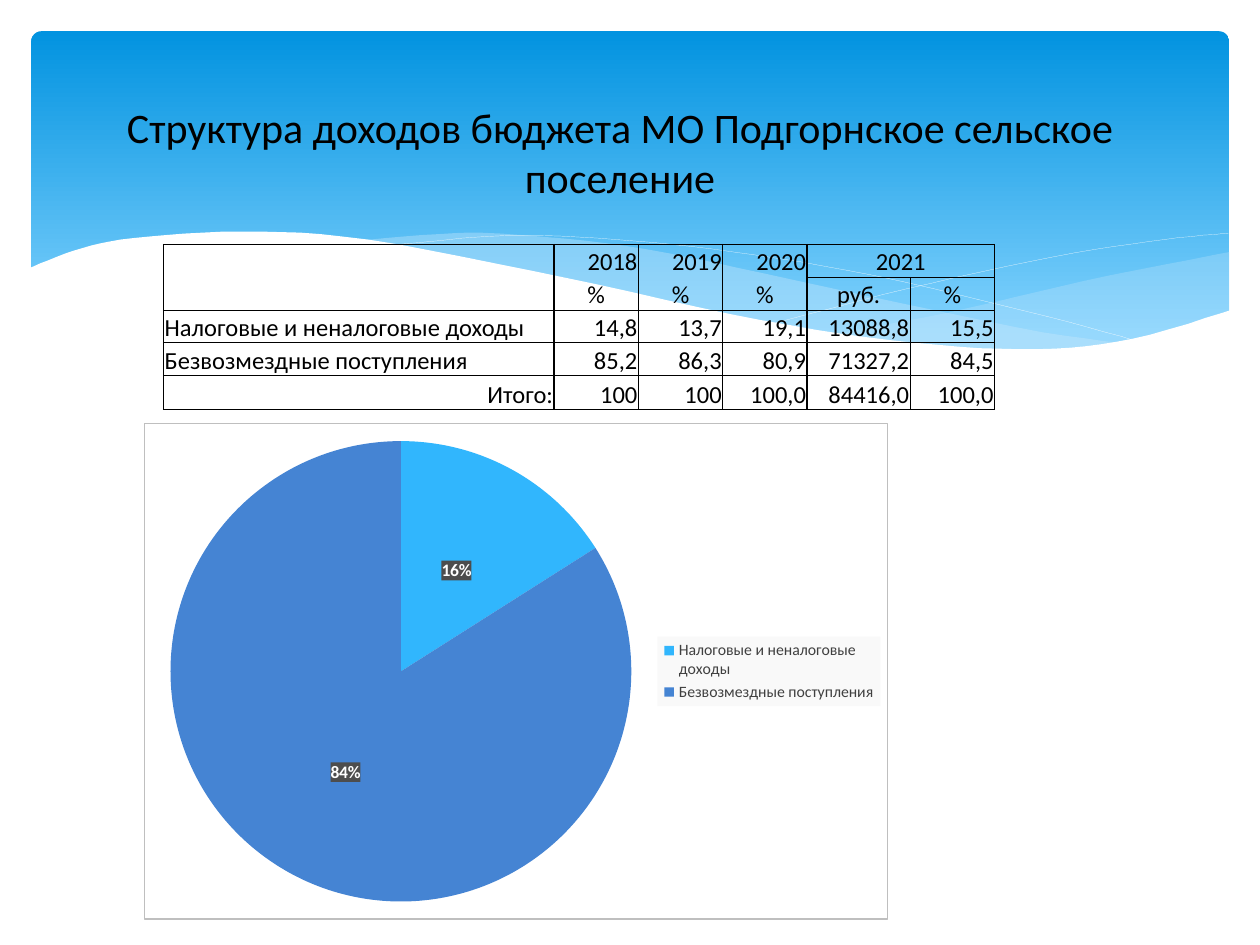
"""Build the budget revenue structure slide with a table and a pie chart."""
import lxml.etree
import pptx
import pptx.chart.data
import pptx.dml.color
import pptx.enum.chart
import pptx.enum.shapes
import pptx.enum.text
import pptx.oxml.ns
import pptx.util

Cm = pptx.util.Cm
Pt = pptx.util.Pt
qn = pptx.oxml.ns.qn
Align = pptx.enum.text.PP_ALIGN
Anchor = pptx.enum.text.MSO_ANCHOR

FONT = "Calibri"
BLACK, WHITE, PALE_BLUE = "000000", "FFFFFF", "C6E7FC"
BANNER_TOP, BANNER_BOTTOM = "0293E0", "83D3FE"
SLICE_COLORS = ("31B6FD", "4584D3")
THIN, THICK = Pt(0.5), Pt(1)
CURVE_STEPS = 6


def color(value):
    """Return the colour for a hex string."""
    return pptx.dml.color.RGBColor.from_string(value)


def add_nodes(parent, *tags, **attributes):
    """Nest one new element per tag and give the innermost the attributes."""
    for tag in tags:
        parent = lxml.etree.SubElement(parent, qn(tag))
    for name, value in attributes.items():
        parent.set(name, str(value))
    return parent


deck = pptx.Presentation()
deck.slide_width, deck.slide_height = Cm(25.4), Cm(19.05)
page = deck.slides.add_slide(deck.slide_layouts[5])
font_styles = []

banner = page.shapes.add_shape(pptx.enum.shapes.MSO_SHAPE.ROUNDED_RECTANGLE,
                               Cm(0.63), Cm(0.63), Cm(24.15), Cm(6.86))
banner.adjustments[0] = 0.03
banner.shadow.inherit = False
banner.line.fill.background()
banner.fill.gradient()
banner.fill.gradient_angle = 270
for stop, position, shade in zip(banner.fill.gradient_stops, (0, 0.9), (BANNER_TOP, BANNER_BOTTOM)):
    stop.position = position
    stop.color.rgb = color(shade)

right_top = [(24.79, 5.08), (21.87, 5.66), (19.13, 6.3), (16.79, 6.73)]
right_bottom = [(16.79, 6.73), (19.23, 7.01), (21.21, 7.04), (23.19, 6.78), (24.79, 6.27)]
middle_top = [(22.68, 6.93), (20.5, 6.6), (15.98, 5.64), (13.06, 5.03), (10.67, 4.75),
              (9.17, 4.7), (7.26, 4.85)]
middle_bottom = [(7.26, 4.85), (11.4, 5.64), (16.1, 6.63), (18.34, 6.96), (20.5, 7.06),
                 (22.68, 6.93)]
falling_line = [(7.85, 4.95), (10.19, 4.75), (12.42, 4.83), (14.78, 5.08), (17.65, 5.56),
                (21.11, 6.38), (23.04, 6.91)]
rising_line = [(15.57, 6.53), (18.29, 5.82), (21.23, 5.18), (23.47, 4.83), (24.77, 4.7)]
white_top = [(0.58, 5.41), (1.5, 5.05), (2.69, 4.8), (4.9, 4.67), (7.42, 4.83), (11.35, 5.59),
             (15.32, 6.45), (18.44, 6.91), (20.9, 7.04), (22.83, 6.83), (24.82, 6.25)]
white_bottom = [(24.82, 8.36), (0.58, 8.36)]

for edges, fill, opacity in (((right_top, right_bottom), PALE_BLUE, 29),
                             ((middle_top, middle_bottom), PALE_BLUE, 40),
                             ((falling_line,), None, 100),
                             ((rising_line,), None, 100),
                             ((white_top, white_bottom), WHITE, 100)):
    outline = []
    for knots in edges:
        padded = [knots[0], *knots, knots[-1]]
        outline.append(knots[0])
        for before, start, end, after in zip(padded, padded[1:], padded[2:], padded[3:]):
            for step in range(1, CURVE_STEPS + 1):
                t = step / CURVE_STEPS
                outline.append(tuple(
                    b + ((c - a) * t + (2 * a - 5 * b + 4 * c - d) * t ** 2
                         + (3 * b - a - 3 * c + d) * t ** 3) / 2
                    for a, b, c, d in zip(before, start, end, after)))
    hundredths = [(round(x * 100), round(y * 100)) for x, y in outline]
    builder = page.shapes.build_freeform(*hundredths[0], scale=Cm(0.01))
    builder.add_line_segments(hundredths[1:], close=fill is not None)
    wave = builder.convert_to_shape()
    wave.shadow.inherit = False
    if fill:
        wave.fill.solid()
        wave.fill.fore_color.rgb = color(fill)
        wave.line.fill.background()
        add_nodes(next(wave.element.iter(qn("a:srgbClr"))), "a:alpha", val=opacity * 1000)
    else:
        wave.fill.background()
        wave.line.color.rgb = color(WHITE)
        wave.line.width = Pt(0.1)

title = page.shapes.title
title.element.getparent().append(title.element)
title.left, title.top, title.width, title.height = Cm(1.9), Cm(1.9), Cm(21.2), Cm(2.31)
title.text_frame.text = "Структура доходов бюджета МО Подгорнское сельское поселение"
title.text_frame.word_wrap = True
title.text_frame.vertical_anchor = Anchor.MIDDLE
title_para = title.text_frame.paragraphs[0]
title_para.alignment = Align.CENTER
font_styles.append((title_para.font, 24, BLACK))

categories = ("Налоговые и неналоговые доходы", "Безвозмездные поступления")
rows = (("", "2018", "2019", "2020", "2021", ""),
        ("", "%", "%", "%", "руб.", "%"),
        (categories[0], "14,8", "13,7", "19,1", "13088,8", "15,5"),
        (categories[1], "85,2", "86,3", "80,9", "71327,2", "84,5"),
        ("Итого:", "100", "100", "100,0", "84416,0", "100,0"))
column_widths = (7.87, 1.7, 1.7, 1.7, 2.08, 1.7)
row_heights = (0.66, 0.66, 0.66, 0.66, 0.69)
last_row, last_column = len(rows) - 1, len(column_widths) - 1
year_columns = (1, 2, 3)
group_starts, group_ends = (0, 1, 4), (0, 3, last_column)

table = page.shapes.add_table(len(rows), len(column_widths), Cm(3.3), Cm(4.93),
                              Cm(sum(column_widths)), Cm(sum(row_heights))).table
table.first_row = table.horz_banding = False
for column, width in zip(table.columns, column_widths):
    column.width = Cm(width)
for row, height in zip(table.rows, row_heights):
    row.height = Cm(height)

for r, texts in enumerate(rows):
    for c, text in enumerate(texts):
        cell = table.cell(r, c)
        cell.text = text
        cell.vertical_anchor = Anchor.BOTTOM
        cell.margin_left = cell.margin_right = cell.margin_top = Cm(0.02)
        cell.margin_bottom = 0
        para = cell.text_frame.paragraphs[0]
        if r == 1 or text == "2021":
            para.alignment = Align.CENTER
        else:
            para.alignment = Align.LEFT if text in categories else Align.RIGHT
        font_styles.append((para.font, 14, BLACK))

        thick_sides = {"a:lnL": c in group_starts, "a:lnR": c in group_ends,
                       "a:lnT": r == 0, "a:lnB": r == last_row}
        open_sides = {"a:lnL": r == 0 and c == last_column,
                      "a:lnT": r == 1 and c in (0, *year_columns),
                      "a:lnB": r == 0 and c in year_columns}
        for side, is_thick in thick_sides.items():
            border = add_nodes(cell._tc.get_or_add_tcPr(), side, w=THICK if is_thick else THIN)
            if open_sides.get(side):
                add_nodes(border, "a:noFill")
            else:
                add_nodes(border, "a:solidFill", "a:srgbClr", val=BLACK)
        cell.fill.background()
table.cell(0, 0).merge(table.cell(1, 0))
table.cell(0, 4).merge(table.cell(0, 5))

data = pptx.chart.data.CategoryChartData()
data.categories = categories
data.add_series("Series 1", (16, 84))
chart = page.shapes.add_chart(pptx.enum.chart.XL_CHART_TYPE.PIE, Cm(2.9), Cm(8.53),
                              Cm(15.01), Cm(10.01), data).chart
chart.has_title = False
chart.has_legend = True
chart.legend.position = pptx.enum.chart.XL_LEGEND_POSITION.RIGHT
chart.legend.include_in_layout = False
plot = chart.plots[0]
plot.vary_by_categories = True
for index, shade in enumerate(SLICE_COLORS):
    slice_format = plot.series[0].points[index].format
    slice_format.fill.solid()
    slice_format.fill.fore_color.rgb = color(shade)
    slice_format.line.fill.background()
plot.has_data_labels = True
labels = plot.data_labels
labels.show_percentage, labels.show_value = True, False
labels.number_format, labels.number_format_is_linked = "0%", False
labels.position = pptx.enum.chart.XL_LABEL_POSITION.CENTER
labels.font.bold = True
font_styles += [(chart.font, 10, BLACK), (chart.legend.font, 9, "404040"), (labels.font, 10, WHITE)]

for font, size, shade in font_styles:
    font.name, font.size = FONT, Pt(size)
    font.color.rgb = color(shade)

chart_space = chart.element
plot_area, legend, label_box = (next(chart_space.iter(qn(tag)))
                                for tag in ("c:plotArea", "c:legend", "c:dLbls"))
for part, fill, outline in ((chart_space, WHITE, "BFBFBF"), (legend, "F9F9F9", None),
                            (label_box, "4D4D4D", None)):
    look = lxml.etree.Element(qn("c:spPr"))
    part.find(qn("c:txPr")).addprevious(look)
    add_nodes(look, "a:solidFill", "a:srgbClr", val=fill)
    if outline:
        add_nodes(add_nodes(look, "a:ln", w=Pt(0.75)), "a:solidFill", "a:srgbClr", val=outline)

for part, slot, frame in ((plot_area, 0, (0.035, 0.035, 0.62, 0.93)),
                          (legend, 1, (0.69, 0.43, 0.3, 0.14))):
    for old in part.findall(qn("c:layout")):
        part.remove(old)
    layout = lxml.etree.Element(qn("c:layout"))
    part.insert(slot, layout)
    manual = add_nodes(layout, "c:manualLayout")
    if part is plot_area:
        add_nodes(manual, "c:layoutTarget", val="inner")
    for tag, value in zip(("c:xMode", "c:yMode", "c:x", "c:y", "c:w", "c:h"),
                          ("edge", "edge", *frame)):
        add_nodes(manual, tag, val=value)

deck.save("out.pptx")
